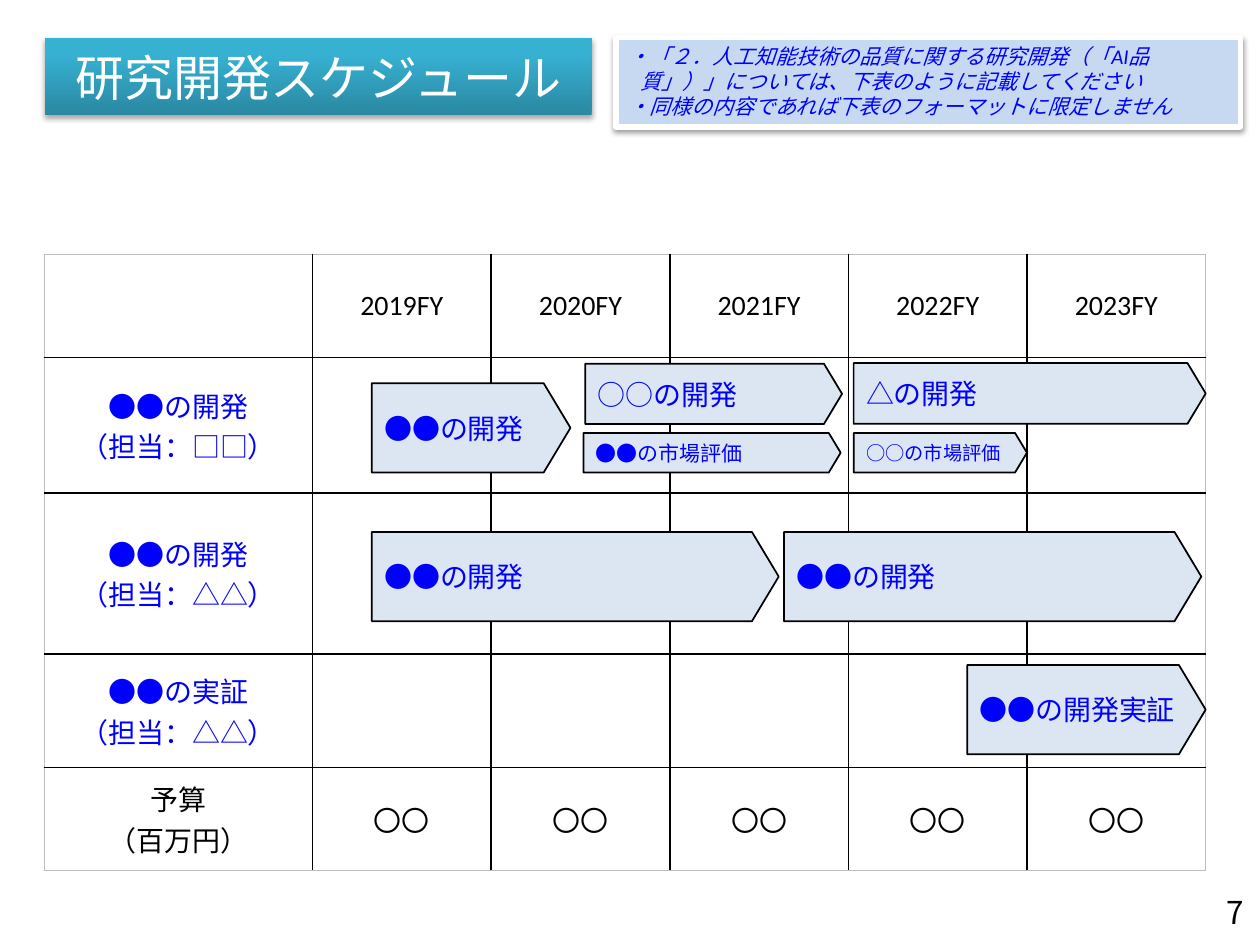
"""Build the research and development schedule slide."""
from lxml.etree import SubElement
from pptx import Presentation
from pptx.dml.color import RGBColor
from pptx.enum.shapes import MSO_SHAPE
from pptx.enum.text import MSO_ANCHOR, PP_ALIGN
from pptx.oxml import parse_xml
from pptx.oxml.ns import nsdecls, qn
from pptx.util import Pt

LATIN, CJK = "Calibri", "Noto Sans CJK JP"
BLACK, WHITE = RGBColor(0, 0, 0), RGBColor(255, 255, 255)
BLUE = RGBColor(0, 0, 255)
BAR_FILL, NOTE_FILL = RGBColor(0xDC, 0xE6, 0xF2), RGBColor(0xC6, 0xD9, 0xF1)
TITLE_DARK, TITLE_LIGHT = RGBColor(0x2A, 0x88, 0xA2), RGBColor(0x37, 0xB1, 0xD2)
GRID, FRAME = BLACK, RGBColor(0xBF, 0xBF, 0xBF)

TITLE = "研究開発スケジュール"
NOTES = [
    "・「２．人工知能技術の品質に関する研究開発（「AI品質」）」については、下表のように記載してください",
    "・同様の内容であれば下表のフォーマットに限定しません",
]
YEARS = [f"{year}FY" for year in range(2019, 2024)]
ROWS = [
    [""] + YEARS,
    ["●●の開発\n（担当：□□）"] + [""] * 5,
    ["●●の開発\n（担当：△△）"] + [""] * 5,
    ["●●の実証\n（担当：△△）"] + [""] * 5,
    ["予算\n（百万円）"] + ["〇〇"] * 5,
]
ROW_HEIGHTS = [59, 77.5, 92, 65, 58.5]
COL_WIDTHS = [153.4] + [102.1] * 5
TABLE_LEFT, TABLE_TOP = 25.2, 145.2

BARS = [
    ("●●の市場評価", 333.4, 247.4, 147, 22.6, 12),
    ("●●の開発", 448, 304, 238.5, 51, 16),
    ("●●の開発", 212.5, 219, 113.5, 51, 16),
    ("●●の開発", 212.5, 304, 232.5, 51, 16),
    ("●●の開発実証", 552.7, 380, 136.3, 51, 16),
    ("○○の開発", 334.5, 207.8, 146.7, 34.5, 16),
    ("○○の市場評価", 487.8, 247.4, 99, 22.6, 11),
    ("△の開発", 487.8, 207.5, 201.2, 34.7, 16),
]


def place(s, left, top, width, height):
    s.left, s.top, s.width, s.height = map(Pt, (left, top, width, height))


def write(tf, text, size, color, align=PP_ALIGN.LEFT, font=LATIN, hang=0, italic=None):
    tf.text = text
    for p in tf.paragraphs:
        p.alignment = align
        if hang:
            pPr = p._p.get_or_add_pPr()
            pPr.set("marL", str(Pt(hang)))
            pPr.set("indent", str(-Pt(hang)))
        for r in p.runs:
            r.font.size, r.font.name, r.font.italic = Pt(size), font, italic
            r.font.color.rgb = color
            SubElement(r._r.get_or_add_rPr(), qn("a:ea"), typeface=CJK)


def add_shadow(s, alpha, blur, dist):
    s._element.spPr.append(parse_xml(
        f'<a:effectLst {nsdecls("a")}><a:outerShdw blurRad="{Pt(blur)}" dist="{Pt(dist)}" '
        f'dir="5400000" rotWithShape="0"><a:srgbClr val="000000">'
        f'<a:alpha val="{alpha * 1000}"/></a:srgbClr></a:outerShdw></a:effectLst>'))


def set_borders(cell, sides):
    tcPr = cell._tc.get_or_add_tcPr()
    for i, (side, color) in enumerate(sides):
        tcPr.insert(i, parse_xml(
            f'<a:{side} {nsdecls("a")} w="{Pt(1 if color == GRID else 0.5)}"><a:solidFill>'
            f'<a:srgbClr val="{color}"/></a:solidFill></a:{side}>'))


def add_title(slide):
    s = slide.shapes.title
    place(s, 25.6, 21.8, 312.5, 44)
    s.fill.gradient()
    s.fill.gradient_angle = 90
    dark, light = s.fill.gradient_stops
    dark.color.rgb, light.color.rgb = TITLE_DARK, TITLE_LIGHT
    dark.position, light.position = 0, 0.8
    add_shadow(s, 35, 3.1, 1.8)
    s.text_frame.vertical_anchor = MSO_ANCHOR.MIDDLE
    write(s.text_frame, TITLE, 28, WHITE, PP_ALIGN.CENTER)


def add_note(slide):
    s = slide.shapes.add_shape(MSO_SHAPE.RECTANGLE, 0, 0, 0, 0)
    place(s, 352, 21.6, 357, 51)
    s.fill.solid()
    s.fill.fore_color.rgb = NOTE_FILL
    s.line.color.rgb, s.line.width = WHITE, Pt(3)
    add_shadow(s, 38, 3.1, 1.6)
    tf = s.text_frame
    tf.word_wrap, tf.vertical_anchor = True, MSO_ANCHOR.TOP
    write(tf, "\n".join(NOTES), 12, BLUE, hang=7.2, italic=True)
    for p in tf.paragraphs:
        p.line_spacing = Pt(14.3)


def add_schedule(slide):
    last_row, last_col = len(ROWS) - 1, len(COL_WIDTHS) - 1
    table = slide.shapes.add_table(
        len(ROWS), len(COL_WIDTHS), Pt(TABLE_LEFT), Pt(TABLE_TOP),
        Pt(sum(COL_WIDTHS)), Pt(sum(ROW_HEIGHTS))).table
    table.first_row = table.horz_banding = False
    for column, width in zip(table.columns, COL_WIDTHS):
        column.width = Pt(width)
    for i, (row, height) in enumerate(zip(ROWS, ROW_HEIGHTS)):
        table.rows[i].height = Pt(height)
        for j, text in enumerate(row):
            cell = table.cell(i, j)
            cell.fill.background()
            cell.vertical_anchor = MSO_ANCHOR.MIDDLE
            cell.margin_left = cell.margin_right = cell.margin_top = cell.margin_bottom = 0
            color = BLUE if 0 < i < last_row else BLACK
            write(cell.text_frame, text, 16, color, PP_ALIGN.CENTER, CJK if i else LATIN)
            edges = {"lnL": j == 0, "lnR": j == last_col, "lnT": i == 0, "lnB": i == last_row}
            set_borders(cell, [(k, FRAME if outer else GRID) for k, outer in edges.items()])


def add_bar(slide, text, left, top, width, height, size):
    s = slide.shapes.add_shape(MSO_SHAPE.PENTAGON, 0, 0, 0, 0)
    place(s, left, top, width, height)
    s.adjustments[0] = 0.3
    s.fill.solid()
    s.fill.fore_color.rgb = BAR_FILL
    s.line.color.rgb, s.line.width = BLACK, Pt(1)
    s.shadow.inherit = False
    s.text_frame.word_wrap = True
    s.text_frame.vertical_anchor = MSO_ANCHOR.MIDDLE
    write(s.text_frame, text, size, BLUE, hang=7.2)


def add_page_number(slide):
    tf = slide.shapes.add_textbox(Pt(669), Pt(512), Pt(41.8), Pt(18)).text_frame
    tf.margin_left = tf.margin_right = tf.margin_top = tf.margin_bottom = 0
    tf.word_wrap, tf.vertical_anchor = True, MSO_ANCHOR.MIDDLE
    write(tf, "7", 18, BLACK, PP_ALIGN.RIGHT, CJK)


def main():
    prs = Presentation()
    prs.slide_width, prs.slide_height = Pt(720), Pt(540)
    slide = prs.slides.add_slide(prs.slide_layouts[5])
    add_title(slide)
    add_note(slide)
    add_schedule(slide)
    for bar in BARS:
        add_bar(slide, *bar)
    add_page_number(slide)
    prs.save("out.pptx")


if __name__ == "__main__":
    main()
